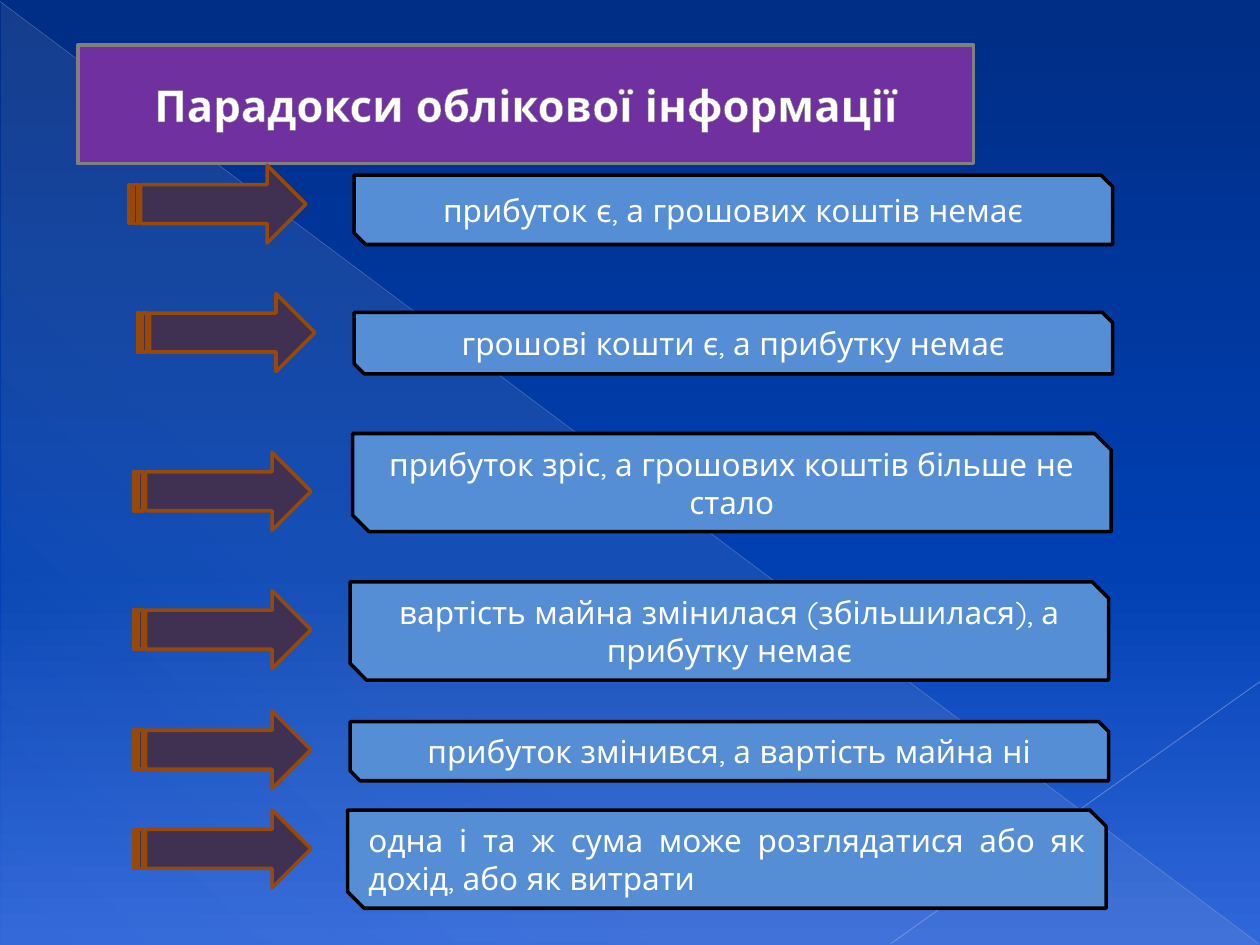
from lxml.etree import SubElement
from pptx import Presentation
from pptx.dml.color import RGBColor
from pptx.enum.shapes import MSO_CONNECTOR, MSO_SHAPE
from pptx.enum.text import MSO_ANCHOR, PP_ALIGN
from pptx.oxml.ns import qn
from pptx.util import Cm, Pt

# Content: text, alignment, arrow (left, top), box (left, top, height) in cm
TITLE = "Парадокси облікової інформації"
CENTER, JUSTIFY = PP_ALIGN.CENTER, PP_ALIGN.JUSTIFY
PARADOXES = [
    ("прибуток є, а грошових коштів немає", CENTER, (2.59, 3.33), (7.14, 3.53, 1.4)),
    ("грошові кошти є, а прибутку немає", CENTER, (2.77, 5.92), (7.14, 6.3, 1.24)),
    ("прибуток зріс, а грошових коштів більше не стало", CENTER,
     (2.69, 9.12), (7.11, 8.74, 1.98)),
    ("вартість майна змінилася (збільшилася), а прибутку немає", CENTER,
     (2.69, 11.91), (7.06, 11.73, 1.98)),
    ("прибуток змінився, а вартість майна ні", CENTER, (2.69, 14.33), (7.06, 14.55, 1.19)),
    ("одна і та ж сума може розглядатися або як дохід, або як витрати", JUSTIFY,
     (2.69, 16.33), (7.01, 16.33, 1.98)),
]
ARROW_SIZE = (3.58, 1.57)
BOX_WIDTH = 15.29

THEME = {
    "font": "Quicksand", "title_size": 25, "text_size": 18, "text": "FFFFFF",
    "title_fill": "7030A0", "title_line": "808080", "title_outline": "7D7D7D",
    "box_fill": "558ED5", "box_line": "000000",
    "arrow_fill": "403152", "arrow_line": "984807", "line_width": 2,
    # Gradient stops: position %, colour, opacity %
    "background": [(0, "002D85", 100), (60, "0040B3", 100), (100, "3067DA", 100)],
    "triangle": [(0, "EEECE1", 10), (70, "EEECE1", 8), (100, "EEECE1", 1)],
}
# Decorative lines: start, end, colour, width, opacity %
RAYS = [
    ((0, 0.03), (25.37, 19.02), "ADB6CE", 0.39, 35),
    ((25.4, 13.74), (17.96, 19.02), "B6BED3", 0.47, 45),
]


def set_alpha(color, percent):
    SubElement(color, qn("a:alpha"), val=str(percent * 1000))


def set_gradient(parent, stops, angle):
    """Replace the solid fill in parent with a linear gradient."""
    solid = parent.find(qn("a:solidFill"))
    grad = SubElement(parent, qn("a:gradFill"), rotWithShape="1")
    parent.replace(solid, grad)
    gs_list = SubElement(grad, qn("a:gsLst"))
    for pos, color, alpha in stops:
        gs = SubElement(gs_list, qn("a:gs"), pos=str(pos * 1000))
        set_alpha(SubElement(gs, qn("a:srgbClr"), val=color), alpha)
    SubElement(grad, qn("a:lin"), ang=str(angle * 60000), scaled="0")


def add_shape(s, kind, rect, fill, line=None):
    sp = s.shapes.add_shape(kind, *map(Cm, rect))
    sp.shadow.inherit = False
    sp.fill.solid()
    sp.fill.fore_color.rgb = RGBColor.from_string(fill)
    if line:
        sp.line.color.rgb = RGBColor.from_string(line)
        sp.line.width = Pt(THEME["line_width"])
    else:
        sp.line.fill.background()
    return sp


def set_text(sp, text, size, align, bold=False):
    tf = sp.text_frame
    tf.word_wrap = True
    tf.vertical_anchor = MSO_ANCHOR.MIDDLE
    p = tf.paragraphs[0]
    p.text = text
    p.alignment = align
    r = p.runs[0]
    r.font.name = THEME["font"]
    r.font.size = Pt(size)
    r.font.bold = bold
    r.font.color.rgb = RGBColor.from_string(THEME["text"])
    return r


def set_outline(r, color, width):
    props = r._r.get_or_add_rPr()
    ln = SubElement(props, qn("a:ln"), w=str(Pt(width)))
    fill = SubElement(ln, qn("a:solidFill"))
    SubElement(fill, qn("a:srgbClr"), val=color)
    props.insert(0, ln)  # the outline must precede the fill


def add_ray(s, start, end, color, width, alpha):
    ray = s.shapes.add_connector(MSO_CONNECTOR.STRAIGHT, *map(Cm, start + end))
    ray.line.color.rgb = RGBColor.from_string(color)
    ray.line.width = Pt(width)
    sp_pr = ray._element.spPr
    set_alpha(next(sp_pr.iter(qn("a:srgbClr"))), alpha)
    SubElement(sp_pr, qn("a:effectLst"))


def main():
    prs = Presentation()
    prs.slide_width, prs.slide_height = Cm(25.4), Cm(19.05)
    s = prs.slides.add_slide(prs.slide_layouts[6])

    # Background gradient, translucent triangle and thin rays
    s.background.fill.solid()
    set_gradient(next(s._element.iter(qn("p:bgPr"))), THEME["background"], 90)
    triangle = add_shape(s, MSO_SHAPE.RIGHT_TRIANGLE, (0.03, 0.05, 25.37, 19), "EEECE1")
    set_gradient(triangle._element.spPr, THEME["triangle"], 133)
    for ray in RAYS:
        add_ray(s, *ray)

    # Title
    title = add_shape(s, MSO_SHAPE.RECTANGLE, (1.57, 0.91, 18.06, 2.39),
                      THEME["title_fill"], THEME["title_line"])
    r = set_text(title, TITLE, THEME["title_size"], CENTER, bold=True)
    set_outline(r, THEME["title_outline"], 0.83)

    # Arrow and box for each paradox
    for text, align, arrow_pos, (left, top, height) in PARADOXES:
        add_shape(s, MSO_SHAPE.STRIPED_RIGHT_ARROW, arrow_pos + ARROW_SIZE,
                  THEME["arrow_fill"], THEME["arrow_line"])
        box = add_shape(s, MSO_SHAPE.SNIP_2_DIAG_RECTANGLE, (left, top, BOX_WIDTH, height),
                        THEME["box_fill"], THEME["box_line"])
        set_text(box, text, THEME["text_size"], align)

    prs.save("out.pptx")


if __name__ == "__main__":
    main()
